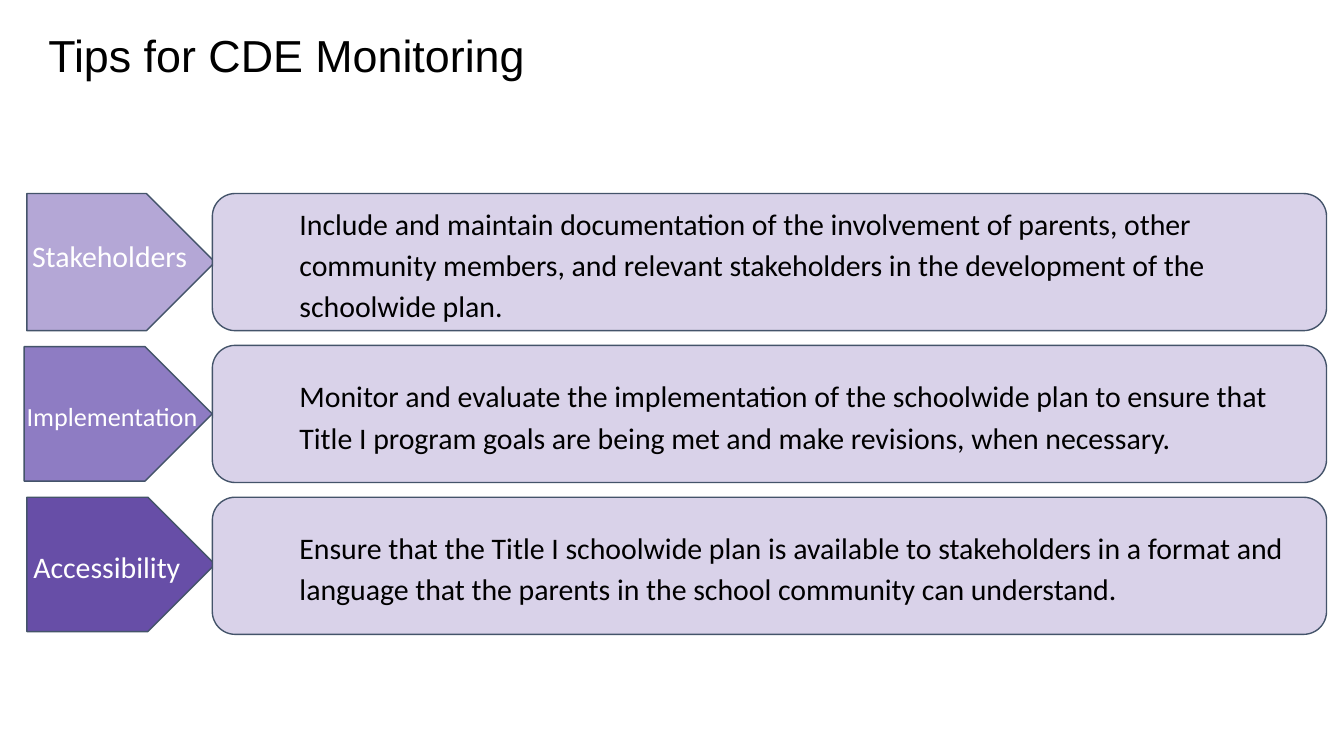
from dataclasses import dataclass

import pptx
import pptx.dml.color
import pptx.enum.shapes
import pptx.enum.text
import pptx.util

SHAPES = pptx.enum.shapes.MSO_SHAPE
ANCHOR = pptx.enum.text.MSO_ANCHOR
AUTO_SIZE = pptx.enum.text.MSO_AUTO_SIZE

SLIDE_WIDTH = 10
SLIDE_HEIGHT = SLIDE_WIDTH * 9 / 16

# Grid: one row per tip, an arrow column and a panel column
FIRST_ROW, ROW_PITCH, ROW_HEIGHT = 1.44, 1.13, 1.02
ARROW_WIDTH = 1.4
PANEL_LEFT, PANEL_WIDTH = 1.58, 8.29

OUTLINE, PANEL_FILL = "44546A", "D9D2E9"
BLACK, WHITE = "000000", "FFFFFF"


@dataclass(frozen=True)
class Box:
    left: float
    top: float
    width: float
    height: float

    def emu(self) -> list[int]:
        return [pptx.util.Inches(v) for v in (self.left, self.top, self.width, self.height)]


@dataclass(frozen=True)
class Tip:
    label: str
    advice: str
    arrow_color: str
    arrow_box: Box  # tops are measured from the top of the row
    label_box: Box
    label_size: int = 16


TIPS = [
    Tip("Stakeholders",
        "Include and maintain documentation of the involvement of parents, other community "
        "members, and relevant stakeholders in the development of the schoolwide plan.",
        "B4A7D6", Box(0.2, 0, ARROW_WIDTH, 1.02), Box(0.14, 0.23, 1.4, 0.47)),
    Tip("Implementation",
        "Monitor and evaluate the implementation of the schoolwide plan to ensure that "
        "Title I program goals are being met and make revisions, when necessary.",
        "8E7CC3", Box(0.18, 0.01, ARROW_WIDTH, 1), Box(0.1, 0.31, 1.6, 0.44), 14),
    Tip("Accessibility",
        "Ensure that the Title I schoolwide plan is available to stakeholders in a format and "
        "language that the parents in the school community can understand.",
        "674EA7", Box(0.2, 0, ARROW_WIDTH, 1), Box(0.15, 0.28, 1.4, 0.47)),
]


def rgb(color: str) -> pptx.dml.color.RGBColor:
    return pptx.dml.color.RGBColor.from_string(color)


def in_row(row: int, box: Box) -> Box:
    """Move a box from row coordinates to slide coordinates."""
    return Box(box.left, FIRST_ROW + row * ROW_PITCH + box.top, box.width, box.height)


def write(shape, text: str, size: int, color: str, font: str = "Calibri",
          inset: float = 0.1, spacing: float = 1.0, anchor=ANCHOR.TOP):
    """Fill a shape with one left-aligned paragraph and return the paragraph."""
    frame = shape.text_frame
    frame.text = text
    frame.word_wrap = True
    frame.vertical_anchor = anchor
    frame.margin_left = frame.margin_right = pptx.util.Inches(inset)
    frame.margin_top = frame.margin_bottom = pptx.util.Inches(inset)
    paragraph = frame.paragraphs[0]
    paragraph.alignment = pptx.enum.text.PP_ALIGN.LEFT
    paragraph.line_spacing = spacing
    paragraph.font.name = font
    paragraph.font.size = pptx.util.Pt(size)
    paragraph.font.color.rgb = rgb(color)
    return paragraph


def add_outlined(slide, preset, box: Box, fill: str):
    shape = slide.shapes.add_shape(preset, *box.emu())
    shape.shadow.inherit = False
    shape.fill.solid()
    shape.fill.fore_color.rgb = rgb(fill)
    shape.line.color.rgb = rgb(OUTLINE)
    shape.line.width = pptx.util.Pt(0.75)
    return shape


def add_tip(slide, row: int, tip: Tip) -> None:
    # Arrow and its label
    add_outlined(slide, SHAPES.PENTAGON, in_row(row, tip.arrow_box), tip.arrow_color)
    label = slide.shapes.add_textbox(*in_row(row, tip.label_box).emu())
    write(label, tip.label, tip.label_size, WHITE)
    label.text_frame.auto_size = AUTO_SIZE.SHAPE_TO_FIT_TEXT

    # Panel with the advice
    panel_box = in_row(row, Box(PANEL_LEFT, 0, PANEL_WIDTH, ROW_HEIGHT))
    panel = add_outlined(slide, SHAPES.ROUNDED_RECTANGLE, panel_box, PANEL_FILL)
    advice = write(panel, tip.advice, 16, BLACK, spacing=1.15, anchor=ANCHOR.MIDDLE)
    properties = advice._p.get_or_add_pPr()
    properties.set("marL", str(pptx.util.Inches(0.5)))
    properties.set("indent", "0")


def main() -> None:
    deck = pptx.Presentation()
    deck.slide_width = pptx.util.Inches(SLIDE_WIDTH)
    deck.slide_height = pptx.util.Inches(SLIDE_HEIGHT)
    slide = deck.slides.add_slide(deck.slide_layouts[5])

    # Title
    title = slide.shapes.title
    title.left, title.top, title.width, title.height = Box(0.36, 0.25, 6.62, 0.52).emu()
    write(title, "Tips for CDE Monitoring", 24, BLACK, font="Arial", inset=0, spacing=0.9)
    title.text_frame.auto_size = AUTO_SIZE.NONE

    # Tips
    for row, tip in enumerate(TIPS):
        add_tip(slide, row, tip)

    deck.save("out.pptx")


if __name__ == "__main__":
    main()
